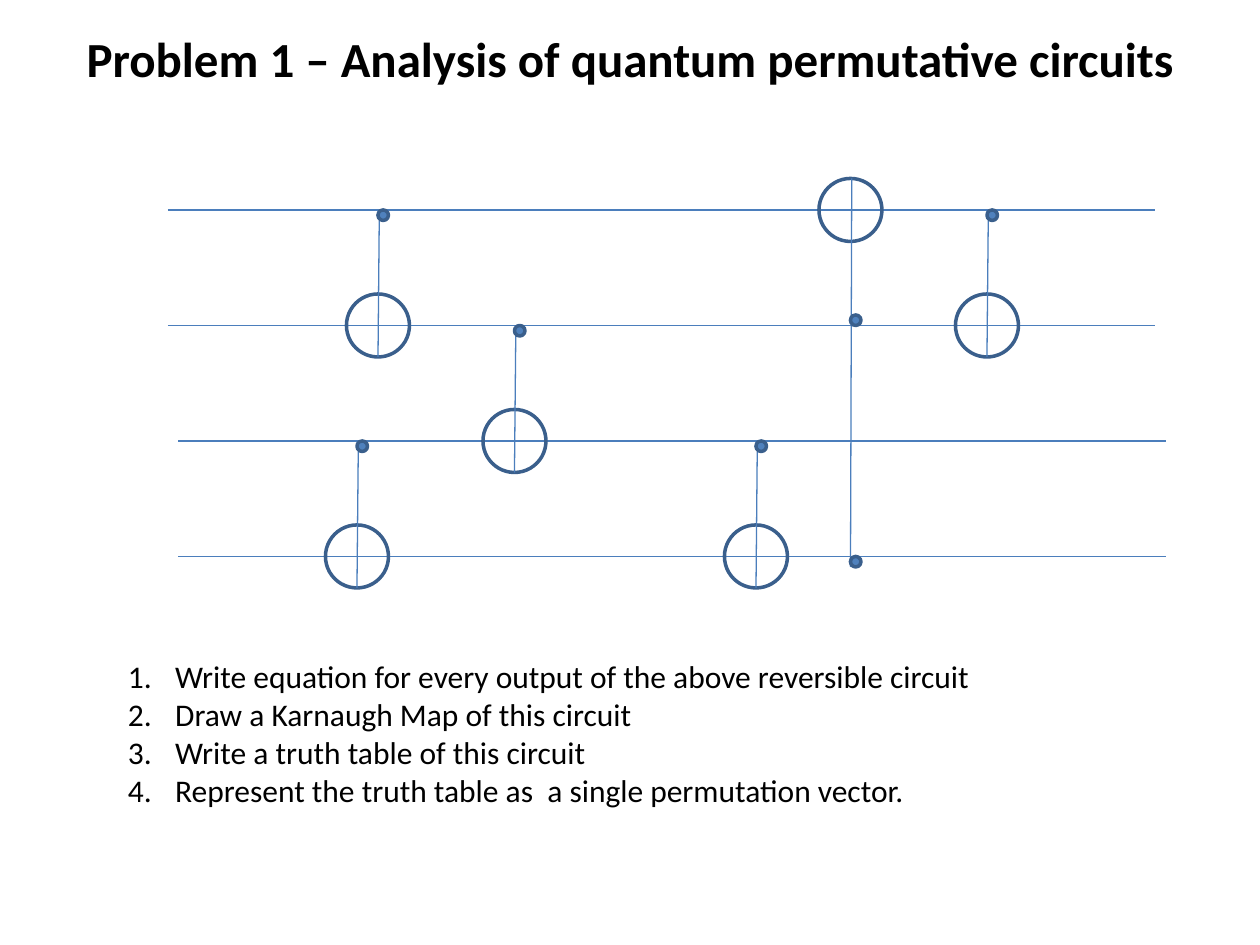
from lxml import etree
from pptx import Presentation
from pptx.dml.color import RGBColor
from pptx.enum.shapes import MSO_CONNECTOR, MSO_SHAPE
from pptx.enum.text import MSO_ANCHOR, PP_ALIGN
from pptx.oxml.ns import qn
from pptx.util import Pt

STRAIGHT = MSO_CONNECTOR.STRAIGHT
OVAL = MSO_SHAPE.OVAL
MIDDLE, TOP = MSO_ANCHOR.MIDDLE, MSO_ANCHOR.TOP
CENTER, LEFT = PP_ALIGN.CENTER, PP_ALIGN.LEFT

TITLE = "Problem 1 – Analysis of quantum permutative circuits"
TASKS = [
    "Write equation for every output of the above reversible circuit",
    "Draw a Karnaugh Map of this circuit",
    "Write a truth table of this circuit",
    "Represent the truth table as  a single permutation vector.",
]
WIRE_STARTS = [96, 96, 102, 102]
# x of the gate, target wire, controls as (wire, shift of the dot)
GATES = [
    (294 - 78, 1, [(0, 0)]),
    (294, 2, [(1, 0)]),
    (204, 3, [(2, 0)]),
    (432, 3, [(2, 0)]),
    (486, 0, [(1, -6), (3, 0)]),
    (564, 1, [(0, 0)]),
]

THEME = {
    "font": "Calibri",
    "title_size": 28,
    "task_size": 18,
    "text": RGBColor(0x00, 0x00, 0x00),
    "wire": RGBColor(0x4B, 0x7E, 0xBC),
    "outline": RGBColor(0x3A, 0x5F, 0x8C),
    "dot": RGBColor(0x4F, 0x81, 0xBD),
}
WIRE_TOP, WIRE_GAP, WIRE_LENGTH = 120, 66, 564
RADIUS, DOT, LEAN = 18, 6, 0.72
INDENT = 27


def wire_y(wire):
    return WIRE_TOP + wire * WIRE_GAP


def add_line(slide, x1, y1, x2, y2):
    line = slide.shapes.add_connector(STRAIGHT, Pt(x1), Pt(y1), Pt(x2), Pt(y2))
    line.line.color.rgb = THEME["wire"]
    line.line.width = Pt(0.75)
    etree.SubElement(line._element.spPr, qn("a:effectLst"))


def add_circle(slide, left, top, size, fill=None):
    circle = slide.shapes.add_shape(OVAL, Pt(left), Pt(top), Pt(size), Pt(size))
    circle.shadow.inherit = False
    if fill is None:
        circle.fill.background()
    else:
        circle.fill.solid()
        circle.fill.fore_color.rgb = fill
    circle.line.color.rgb = THEME["outline"]
    circle.line.width = Pt(2)


def add_gate(slide, x, target, controls):
    """Draw the target ring, the upright through it and the control dots."""
    target_y = wire_y(target)
    last_control = controls[-1][0]
    far_side = RADIUS if last_control < target else -RADIUS
    top, bottom = sorted([wire_y(last_control) + DOT, target_y + far_side])
    add_circle(slide, x - RADIUS, target_y - RADIUS, 2 * RADIUS)
    add_line(slide, x + LEAN, top, x, bottom)
    for wire, shift in controls:
        add_circle(slide, x, wire_y(wire) + shift, DOT, THEME["dot"])


def number_paragraph(paragraph):
    properties = paragraph._p.get_or_add_pPr()
    properties.set("marL", str(Pt(INDENT)))
    properties.set("indent", str(-Pt(INDENT)))
    etree.SubElement(properties, qn("a:buFont"), typeface="+mj-lt")
    etree.SubElement(properties, qn("a:buAutoNum"), type="arabicPeriod")


def add_text(slide, box, lines, size, align, anchor, bold=False, numbered=False):
    frame = slide.shapes.add_textbox(*map(Pt, box)).text_frame
    frame.word_wrap = True
    frame.vertical_anchor = anchor
    for i, line in enumerate(lines):
        paragraph = frame.add_paragraph() if i else frame.paragraphs[0]
        paragraph.alignment = align
        if numbered:
            number_paragraph(paragraph)
        run = paragraph.add_run()
        run.text = line
        run.font.name = THEME["font"]
        run.font.size = Pt(size)
        run.font.bold = bold
        run.font.color.rgb = THEME["text"]


def main():
    deck = Presentation()
    deck.slide_width, deck.slide_height = Pt(720), Pt(540)
    slide = deck.slides.add_slide(deck.slide_layouts[6])
    add_text(slide, (0, 0, 720, 66), [TITLE], THEME["title_size"],
             CENTER, MIDDLE, bold=True)
    for wire, start in enumerate(WIRE_STARTS):
        add_line(slide, start, wire_y(wire), start + WIRE_LENGTH, wire_y(wire))
    for gate in GATES:
        add_gate(slide, *gate)
    add_text(slide, (66, 372, 558, 94.5), TASKS, THEME["task_size"],
             LEFT, TOP, numbered=True)
    deck.save("out.pptx")


if __name__ == "__main__":
    main()
